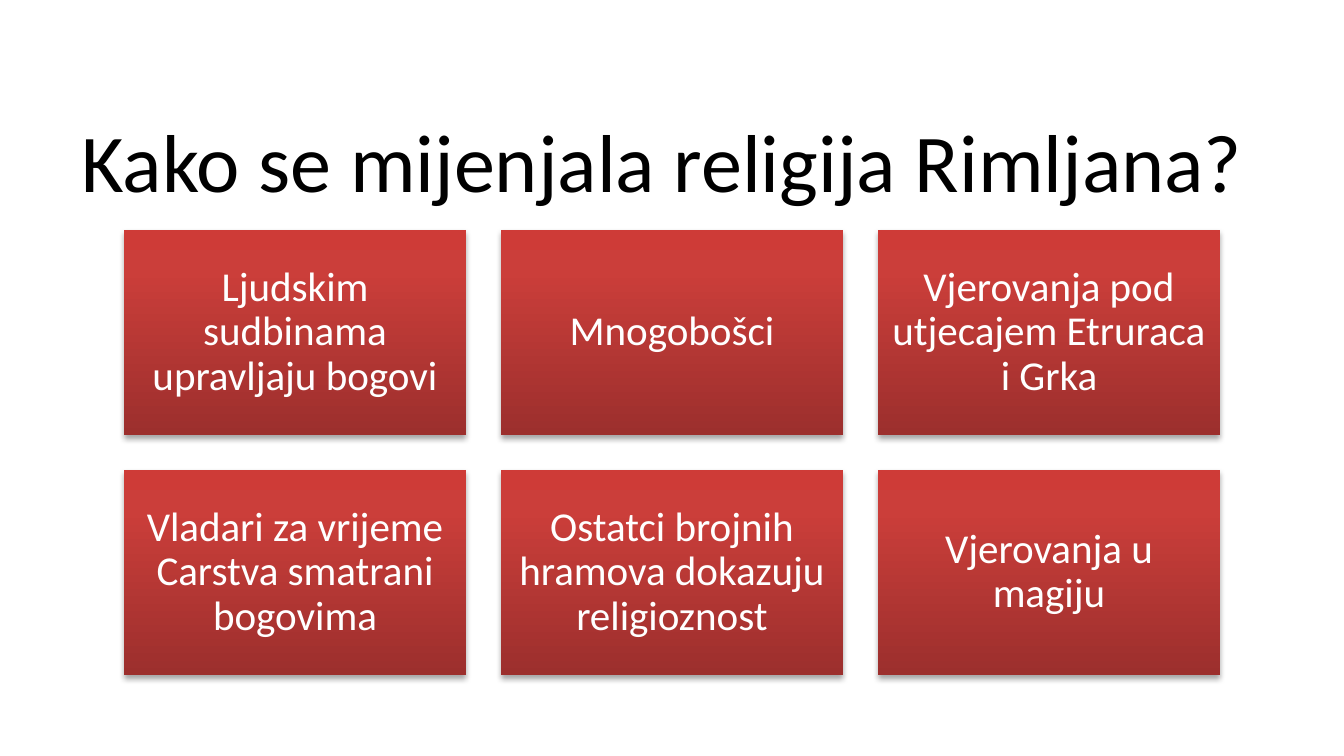
import pptx
import pptx.util
import pptx.dml.color
import pptx.enum.shapes
import pptx.enum.text
import pptx.oxml
import pptx.oxml.ns

RGB = pptx.dml.color.RGBColor
BLACK = RGB(0x00, 0x00, 0x00)
WHITE = RGB(0xFF, 0xFF, 0xFF)
DARK = RGB(0x9C, 0x2F, 0x2D)
MID = RGB(0xCB, 0x3E, 0x3A)
BRIGHT = RGB(0xCE, 0x3B, 0x37)

TITLE = "Kako se mijenjala religija Rimljana? "
CARDS = [
    "Ljudskim sudbinama upravljaju bogovi",
    "Mnogobošci",
    "Vjerovanja pod utjecajem Etruraca i Grka",
    "Vladari za vrijeme Carstva smatrani bogovima",
    "Ostatci brojnih hramova dokazuju religioznost",
    "Vjerovanja u magiju",
]
STOPS = [(0, DARK), (80, MID), (100, BRIGHT)]

WIDE, HIGH = 1344, 756
COLS = 3
LEFT, TOP = 124, 230
CARD_W, CARD_H = 342, 205
GAP = 35
INSET = 12
NS = pptx.oxml.ns.nsdecls("a")


def px(n):
    return pptx.util.Emu(round(n * 914400 / 134.4))


def write(shape, text, size, color):
    frame = shape.text_frame
    frame.word_wrap = True
    frame.vertical_anchor = pptx.enum.text.MSO_ANCHOR.MIDDLE
    para = frame.paragraphs[0]
    para.text = text
    para.alignment = pptx.enum.text.PP_ALIGN.CENTER
    para.line_spacing = 0.9
    para.font.name = "Calibri"
    para.font.size = pptx.util.Pt(size)
    para.font.color.rgb = color


def shade(shape):
    """Fill with the upward red gradient and add a soft shadow below."""
    shape.fill.gradient()
    shape.fill.gradient_angle = 90
    stops = "".join(
        f'<a:gs pos="{pos * 1000}"><a:srgbClr val="{color}"/></a:gs>'
        for pos, color in STOPS)
    props = shape._element.spPr
    old = props.find(".//" + pptx.oxml.ns.qn("a:gsLst"))
    new = pptx.oxml.parse_xml(f"<a:gsLst {NS}>{stops}</a:gsLst>")
    old.getparent().replace(old, new)
    shape.line.fill.background()
    shape.shadow.inherit = False
    props.find(pptx.oxml.ns.qn("a:effectLst")).append(pptx.oxml.parse_xml(
        f'<a:outerShdw {NS} blurRad="40000" dist="23000" dir="5400000" '
        'rotWithShape="0"><a:srgbClr val="000000"><a:alpha val="35000"/>'
        "</a:srgbClr></a:outerShdw>"))


def add_card(slide, index, text):
    row, col = divmod(index, COLS)
    card = slide.shapes.add_shape(
        pptx.enum.shapes.MSO_SHAPE.RECTANGLE,
        px(LEFT + col * (CARD_W + GAP)), px(TOP + row * (CARD_H + GAP)),
        px(CARD_W), px(CARD_H))
    shade(card)
    frame = card.text_frame
    frame.margin_left = frame.margin_right = px(INSET)
    frame.margin_top = frame.margin_bottom = px(INSET)
    write(card, text, 22, WHITE)


def main():
    deck = pptx.Presentation()
    deck.slide_width, deck.slide_height = px(WIDE), px(HIGH)
    slide = deck.slides.add_slide(deck.slide_layouts[6])
    title = slide.shapes.add_textbox(px(67), px(113), px(1210), px(105))
    write(title, TITLE, 44, BLACK)
    for index, text in enumerate(CARDS):
        add_card(slide, index, text)
    deck.save("out.pptx")


if __name__ == "__main__":
    main()
